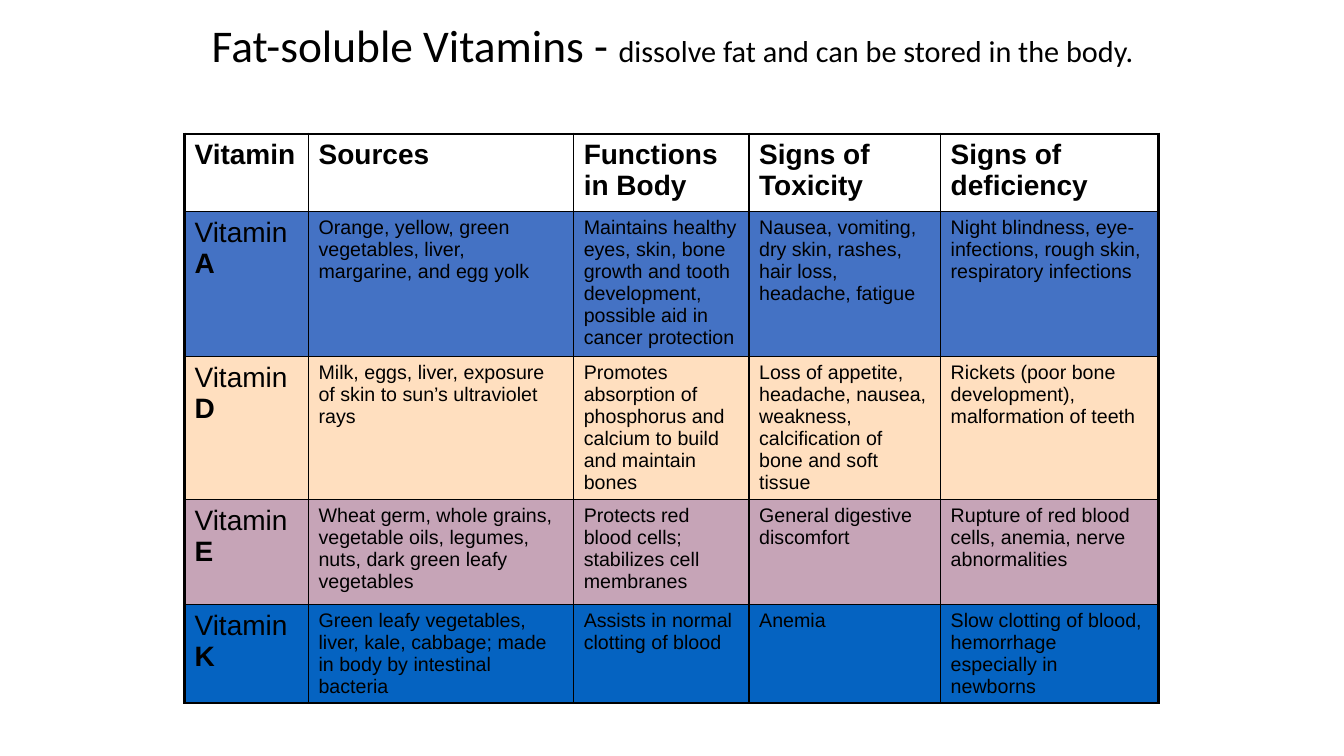
from lxml.etree import SubElement
from pptx import Presentation
from pptx.dml.color import RGBColor
from pptx.enum.text import MSO_ANCHOR, PP_ALIGN
from pptx.oxml.ns import qn
from pptx.util import Inches, Pt

COLUMN_WIDTHS = [1.23, 2.63, 1.74, 1.9, 2.16]
ROW_HEIGHTS = [0.77, 1.44, 1.42, 1.04, 0.97]
HEADINGS = ["Vitamin", "Sources", "Functions in Body", "Signs of Toxicity", "Signs of deficiency"]
VITAMINS = [
    ("A", "4472C4", [
        "Orange, yellow, green vegetables, liver, margarine, and egg yolk",
        "Maintains healthy eyes, skin, bone growth and tooth development, possible aid in cancer protection",
        "Nausea, vomiting, dry skin, rashes, hair loss, headache, fatigue",
        "Night blindness, eye-infections, rough skin, respiratory infections"]),
    ("D", "FFDFBF", [
        "Milk, eggs, liver, exposure of skin to sun’s ultraviolet rays",
        "Promotes absorption of phosphorus and calcium to build and maintain bones",
        "Loss of appetite, headache, nausea, weakness, calcification of bone and soft tissue",
        "Rickets (poor bone development), malformation of teeth"]),
    ("E", "C6A4B7", [
        "Wheat germ, whole grains, vegetable oils, legumes, nuts, dark green leafy vegetables",
        "Protects red blood cells; stabilizes cell membranes",
        "General digestive discomfort",
        "Rupture of red blood cells, anemia, nerve abnormalities"]),
    ("K", "0563C1", [
        "Green leafy vegetables, liver, kale, cabbage; made in body by intestinal bacteria",
        "Assists in normal clotting of blood",
        "Anemia",
        "Slow clotting of blood, hemorrhage especially in newborns"]),
]


def color(value):
    return RGBColor.from_string(value)


class VitaminSlide:
    """Holds the slide and its style, and adds each kind of element."""

    title_font = "Calibri"
    table_font = "Arial"
    ink = "000000"
    outer_line = 2.25
    inner_line = 1

    def __init__(self, presentation):
        self.slide = presentation.slides.add_slide(presentation.slide_layouts[5])

    def add_runs(self, paragraph, runs, font_name):
        for text, size, bold in runs:
            run = paragraph.add_run()
            run.text = text
            run.font.name = font_name
            run.font.size = Pt(size)
            run.font.bold = bold
            run.font.color.rgb = color(self.ink)

    def add_title(self, runs, left, top, width, height):
        title = self.slide.shapes.title
        title.left, title.top = Inches(left), Inches(top)
        title.width, title.height = Inches(width), Inches(height)
        frame = title.text_frame
        frame.word_wrap = True
        frame.vertical_anchor = MSO_ANCHOR.MIDDLE
        frame.margin_bottom = Inches(0.59)
        paragraph = frame.paragraphs[0]
        paragraph.alignment = PP_ALIGN.LEFT
        paragraph.line_spacing = 0.9
        self.add_runs(paragraph, runs, self.title_font)

    def add_table(self, left, top, widths, heights):
        frame = self.slide.shapes.add_table(
            len(heights), len(widths), Inches(left), Inches(top),
            Inches(sum(widths)), Inches(sum(heights)))
        table = frame.table
        table.first_row = table.horz_banding = False
        for column, width in zip(table.columns, widths):
            column.width = Inches(width)
        for row, height in zip(table.rows, heights):
            row.height = Inches(height)
        return table

    def fill_row(self, table, row, cells, fill=None):
        last_row, last_column = len(table.rows) - 1, len(table.columns) - 1
        for column, runs in enumerate(cells):
            cell = table.cell(row, column)
            self.add_runs(cell.text_frame.paragraphs[0], runs, self.table_font)
            self.add_borders(cell, {
                "a:lnL": column == 0, "a:lnR": column == last_column,
                "a:lnT": row == 0, "a:lnB": row == last_row})
            if fill:
                cell.fill.solid()
                cell.fill.fore_color.rgb = color(fill)
            else:
                cell.fill.background()

    def add_borders(self, cell, sides):
        properties = cell._tc.get_or_add_tcPr()
        for tag, is_outer in sides.items():
            width = Pt(self.outer_line if is_outer else self.inner_line)
            line = SubElement(properties, qn(tag), w=str(width))
            solid = SubElement(line, qn("a:solidFill"))
            SubElement(solid, qn("a:srgbClr"), val=self.ink)


def main():
    presentation = Presentation()
    presentation.slide_width = Inches(13.33)
    presentation.slide_height = Inches(7.5)
    page = VitaminSlide(presentation)
    page.add_title([("Fat-soluble Vitamins - ", 32.4, False),
                    ("dissolve fat and can be stored in the body.", 21.6, False)],
                   2, 0.33, 9.67, 0.83)
    table = page.add_table(1.83, 1.33, COLUMN_WIDTHS, ROW_HEIGHTS)
    page.fill_row(table, 0, [[(heading, 20, True)] for heading in HEADINGS])
    for row, (letter, fill, facts) in enumerate(VITAMINS, start=1):
        name = [("Vitamin ", 20, False), (letter, 20, True)]
        page.fill_row(table, row, [name] + [[(fact, 14, False)] for fact in facts], fill)
    presentation.save("out.pptx")


if __name__ == "__main__":
    main()
